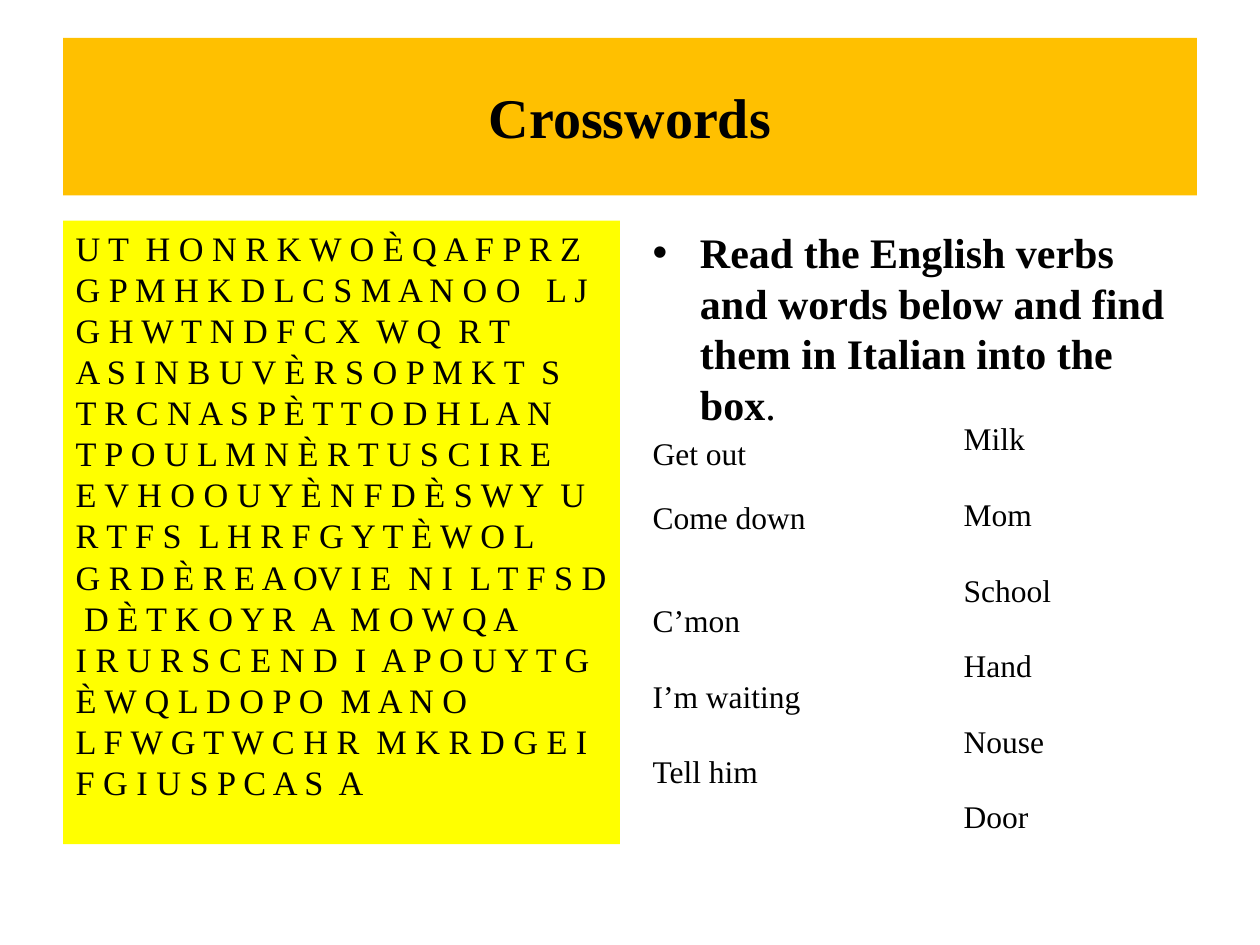
import pptx
import pptx.dml.color
import pptx.enum.text
import pptx.oxml.ns
import pptx.util
from pptx.util import Inches

BLACK = pptx.dml.color.RGBColor(0x00, 0x00, 0x00)
AMBER = pptx.dml.color.RGBColor(0xFF, 0xC0, 0x00)
YELLOW = pptx.dml.color.RGBColor(0xFF, 0xFF, 0x00)

LETTER_ROWS = [
    "U T  H O N R K W O È Q A F P R Z G P M H K D L C S M A N O O   L J G H W T N D F C X  W Q  R T",
    "A S I N B U V È R S O P M K T  S",
    "T R C N A S P È T T O D H L A N",
    "T P O U L M N È R T U S C I R E",
    "E V H O O U Y È N F D È S W Y  U R T F S  L H R F G Y T È W O L",
    "G R D È R E A OV I E  N I  L T F S D  D È T K O Y R  A  M O W Q A",
    "I R U R S C E N D  I  A P O U Y T G È W Q L D O P O  M A N O",
    "L F W G T W C H R  M K R D G E I  F G I U S P C A S  A",
]
WORD_GAP = 21.6
# Each verb with its space before (points) and line spacing
VERBS = [
    ("Get out", 0, 1.15),
    ("Come down", 12, 1.15),
    ("C’mon", 37, 1),
    ("I’m waiting", WORD_GAP, 1),
    ("Tell him", WORD_GAP, 1),
]
NOUNS = ["Milk", "Mom", "School", "Hand", "Nouse", "Door"]


def add_run(paragraph, text, size, bold=False):
    run = paragraph.add_run()
    run.text = text
    font_format = {"name": "Times New Roman", "size": pptx.util.Pt(size), "bold": bold}
    for attribute, value in font_format.items():
        setattr(run.font, attribute, value)
    run.font.color.rgb = BLACK


def add_plain_line(frame, text, size, gap=0, line_spacing=1):
    """Write an unbulleted, unindented paragraph, reusing an empty first one."""
    paragraph = frame.paragraphs[0]
    if paragraph.runs:
        paragraph = frame.add_paragraph()
    paragraph.space_before = pptx.util.Pt(gap)
    paragraph.line_spacing = line_spacing
    properties = paragraph._p.get_or_add_pPr()
    properties.set("marL", "0")
    properties.set("indent", "0")
    properties.append(pptx.oxml.parse_xml(
        f'<a:buNone {pptx.oxml.ns.nsdecls("a")}/>'))
    add_run(paragraph, text, size)


deck = pptx.Presentation()
deck.slide_width, deck.slide_height = Inches(10), Inches(7.5)
slide = deck.slides.add_slide(deck.slide_layouts[3])
heading, letter_box, task = slide.placeholders

column = {"top": Inches(1.75), "width": Inches(4.42), "height": Inches(4.95)}
placements = [
    (heading, {"left": Inches(0.5), "top": Inches(0.3),
               "width": Inches(9), "height": Inches(1.25)}),
    (letter_box, {"left": Inches(0.5), **column}),
    (task, {"left": Inches(5.08), **column}),
]
for part, placement in placements:
    for attribute, value in placement.items():
        setattr(part, attribute, value)
    part.text_frame.auto_size = pptx.enum.text.MSO_AUTO_SIZE.NONE

for part, color in [(heading, AMBER), (letter_box, YELLOW)]:
    part.fill.solid()
    part.fill.fore_color.rgb = color

heading.text_frame.vertical_anchor = pptx.enum.text.MSO_ANCHOR.MIDDLE
title_line = heading.text_frame.paragraphs[0]
title_line.alignment = pptx.enum.text.PP_ALIGN.CENTER
add_run(title_line, "Crosswords", 32, bold=True)

for row in LETTER_ROWS:
    add_plain_line(letter_box.text_frame, row, 19.6)

instruction = task.text_frame.paragraphs[0]
add_run(instruction, "Read the English verbs and words below and find them in Italian into the box",
        24, bold=True)
add_run(instruction, ".", 24)
for verb, gap, line_spacing in VERBS:
    add_plain_line(task.text_frame, verb, 18, gap, line_spacing)

nouns_box = slide.shapes.add_textbox(Inches(7.55), Inches(3.28), Inches(0.9), Inches(3.43))
nouns_box.text_frame.word_wrap = False
nouns_box.text_frame.auto_size = pptx.enum.text.MSO_AUTO_SIZE.SHAPE_TO_FIT_TEXT
for index, noun in enumerate(NOUNS):
    add_plain_line(nouns_box.text_frame, noun, 18, WORD_GAP if index else 0)

deck.save("out.pptx")
